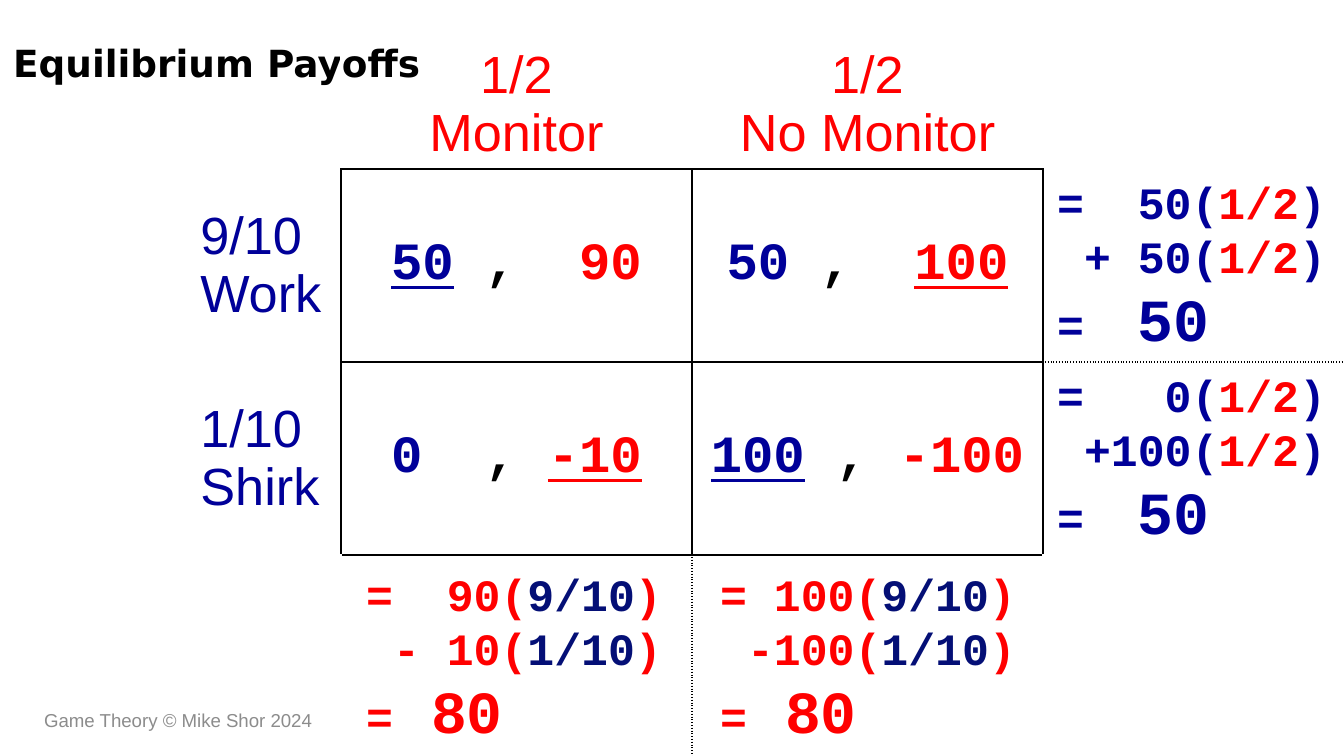
from dataclasses import dataclass

from lxml import etree
from pptx import Presentation, util as u
from pptx.dml.color import RGBColor
from pptx.enum import text
from pptx.oxml import ns

PX = 914400 / 134.4


@dataclass(frozen=True)
class Theme:
    row: str = "000099"      # row player
    column: str = "FF0000"   # column player
    mix: str = "040F76"      # row player's probabilities under the matrix
    ink: str = "000000"
    muted: str = "8C8C8C"
    sans: str = "Arial"
    mono: str = "Courier New"
    heading: str = "DejaVu Sans"
    title: int = 20
    matrix: int = 28
    working: int = 24
    result: int = 32
    small: int = 10


T = Theme()


def emu(px):
    return u.Emu(round(px * PX))


class Board:
    def __init__(self, slide):
        self.slide = slide

    def typeset(self, frame, lines, font, size, bold=False, align=None):
        """Each line is a list of (words, colour[, size or "u"]) parts."""
        frame.text = "\n".join("".join(part[0] for part in parts) for parts in lines)
        for paragraph, parts in zip(frame.paragraphs, lines):
            paragraph.alignment = align
            if len(parts) > 1:
                paragraph.clear()
                for words, *_ in parts:
                    paragraph.add_run().text = words
            for index, run in enumerate(paragraph.runs):
                _, colour, *extra = parts[min(index, len(parts) - 1)]
                run.font.name, run.font.bold = font, bold
                run.font.color.rgb = RGBColor.from_string(colour)
                run.font.underline = "u" in extra
                run.font.size = u.Pt(next((e for e in extra if e != "u"), size))

    def label(self, box, lines, font, size, bold=False, middle=False, wrap=True):
        frame = self.slide.shapes.add_textbox(*map(emu, box)).text_frame
        frame.word_wrap = wrap
        if middle:
            frame.vertical_anchor = text.MSO_ANCHOR.MIDDLE
        self.typeset(frame, lines, font, size, bold)

    def grid(self, left, top, widths, heights):
        table = self.slide.shapes.add_table(
            len(heights), len(widths), emu(left), emu(top),
            emu(sum(widths)), emu(sum(heights))).table
        table.first_row = table.horz_banding = False
        for column, width in zip(table.columns, widths):
            column.width = emu(width)
        for row, height in zip(table.rows, heights):
            row.height = emu(height)
        return table

    def border(self, cell, side, dash):
        line = etree.SubElement(cell._tc.get_or_add_tcPr(), ns.qn(f"a:ln{side}"), w="12700")
        fill = etree.SubElement(line, ns.qn("a:solidFill"))
        etree.SubElement(fill, ns.qn("a:srgbClr"), val=T.ink)
        etree.SubElement(line, ns.qn("a:prstDash"), val=dash)


deck = Presentation()
deck.slide_width, deck.slide_height = emu(1344), emu(756)
board = Board(deck.slides.add_slide(deck.slide_layouts[6]))

# Title
board.label((0, 30, 570, 65), [[("Equilibrium Payoffs", T.ink)]],
            T.heading, T.title, bold=True, middle=True)

# Payoff matrix: headings, strategies and payoffs
matrix = board.grid(187, 30, (154, 351, 351, 310), (138, 193, 193, 202))
for col, strategy in enumerate(("Monitor", "No Monitor"), 1):
    heading = matrix.cell(0, col)
    heading.vertical_anchor = text.MSO_ANCHOR.BOTTOM
    board.typeset(heading.text_frame, [[("1/2", T.column)], [(strategy, T.column)]],
                  T.sans, T.matrix, align=text.PP_ALIGN.CENTER)
for row, strategy in enumerate(("9/10\vWork", "1/10\vShirk"), 1):
    heading = matrix.cell(row, 0)
    heading.vertical_anchor = text.MSO_ANCHOR.MIDDLE
    board.typeset(heading.text_frame, [[(strategy, T.row)]], T.sans, T.matrix)

payoffs = {
    (1, 1): [("50", T.row, "u"), (" ,  ", T.ink), ("90", T.column)],
    (1, 2): [("50", T.row), (" ,  ", T.ink), ("100", T.column, "u")],
    (2, 1): [("0", T.row), ("  , ", T.ink), ("-10", T.column, "u")],
    (2, 2): [("100", T.row, "u"), (" , ", T.ink), ("-100", T.column)],
}
for place, parts in payoffs.items():
    cell = matrix.cell(*place)
    cell.vertical_anchor = text.MSO_ANCHOR.MIDDLE
    board.typeset(cell.text_frame, [parts], T.mono, T.matrix, True, text.PP_ALIGN.CENTER)

# Borders: solid around payoffs, dotted between the expected payoffs
expected = {(1, 3), (2, 3), (3, 1), (3, 2)}
sides = {"L": (0, -1), "R": (0, 1), "T": (-1, 0), "B": (1, 0)}
for row in range(4):
    for col in range(4):
        cell = matrix.cell(row, col)
        for side, (down, across) in sides.items():
            pair = {(row, col), (row + down, col + across)}
            if pair & payoffs.keys():
                board.border(cell, side, "solid")
            elif pair <= expected:
                board.border(cell, side, "sysDot")
        cell.fill.background()

# Expected payoffs of the row player
for top, first, second in ((168, "=  50(", " + 50("), (361, "=   0(", " +100(")):
    lines = [[(start, T.row), ("1/2", T.column), (")", T.row)] for start in (first, second)]
    board.label((1044, top, 298, 195), lines + [[("=  ", T.row), ("50", T.row, T.result)]],
                T.mono, T.working, bold=True)

# Expected payoffs of the column player
for left, first, second in ((353, "=  90(", " - 10("), (707, "= 100(", " -100(")):
    lines = [[(start, T.column), (chance, T.mix), (")", T.column)]
             for start, chance in ((first, "9/10"), (second, "1/10"))]
    total = [("= ", T.column), (" ", T.column, T.small), ("80", T.column, T.result)]
    board.label((left, 560, 325, 195), lines + [total], T.mono, T.working, True, wrap=False)

# Footer
board.label((31, 700, 454, 40), [[("Game Theory © Mike Shor 2024", T.muted)]],
            T.sans, T.small, middle=True)

deck.save("out.pptx")
